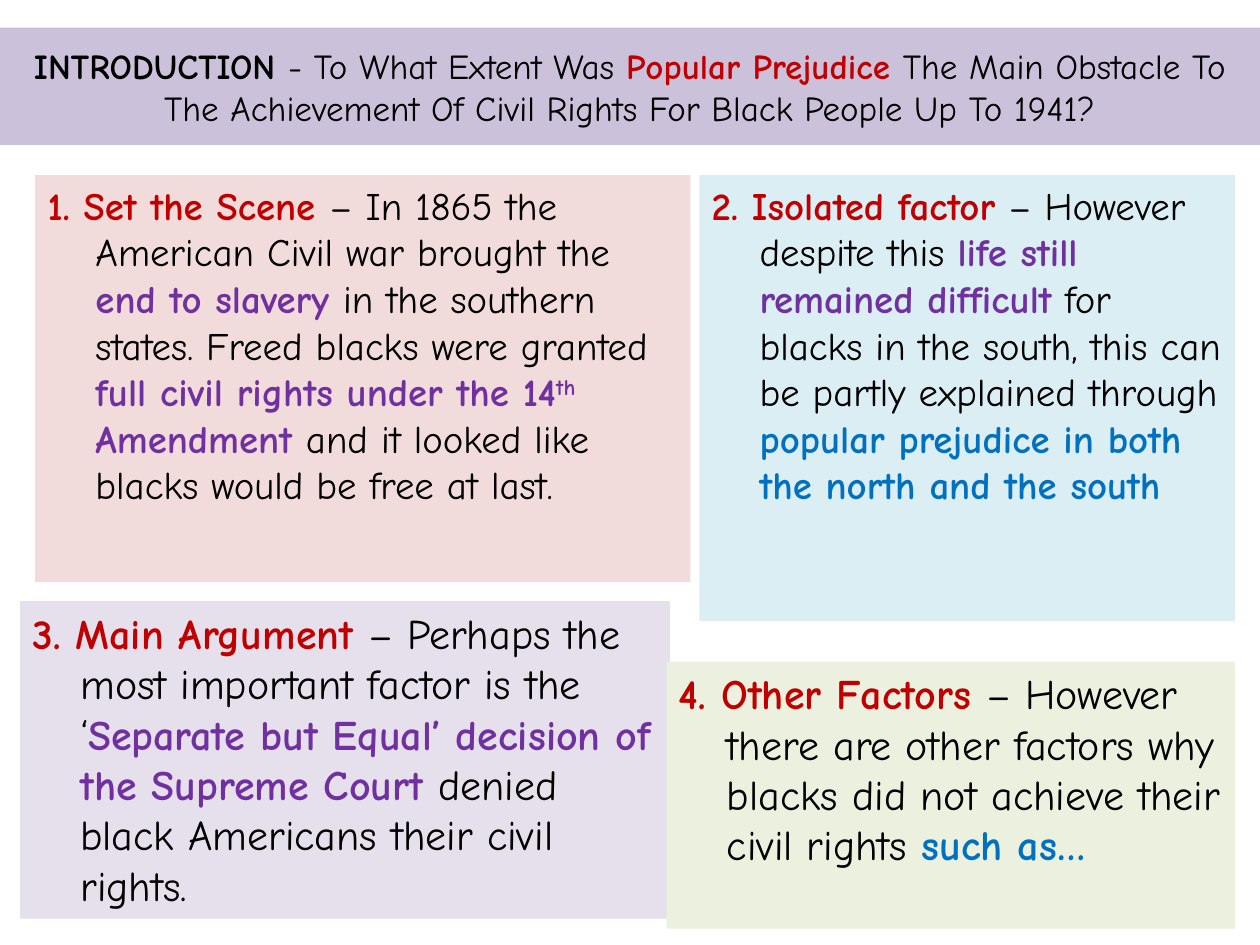
import pptx
import pptx.util
import pptx.dml.color
import pptx.enum.text
from dataclasses import dataclass

Inches = pptx.util.Inches
Align = pptx.enum.text.PP_ALIGN
Anchor = pptx.enum.text.MSO_ANCHOR


@dataclass(frozen=True)
class Theme:
    font: str = "Comic Neue"
    title_size: float = 20
    body_size: float = 22.2
    large_size: float = 24
    text: str = "000000"
    red: str = "C00000"
    purple: str = "7030A0"
    blue: str = "0070C0"
    banner: str = "CCC1DA"
    pink: str = "F2DCDB"
    aqua: str = "DBEEF4"
    lilac: str = "E6E0EC"
    green: str = "EBF1DE"


class Deck:
    def __init__(self, theme):
        self.theme = theme
        self.prs = pptx.Presentation()
        self.prs.slide_width = Inches(10)
        self.prs.slide_height = Inches(7.5)
        self.slide = self.prs.slides.add_slide(self.prs.slide_layouts[6])

    def panel(self, box, fill, size, runs):
        sp = self.slide.shapes.add_textbox(*map(Inches, box))
        sp.fill.solid()
        sp.fill.fore_color.rgb = pptx.dml.color.RGBColor.from_string(fill)
        tf = sp.text_frame
        tf.word_wrap = True
        p = tf.paragraphs[0]
        p.font.name = self.theme.font
        p.font.size = pptx.util.Pt(size)
        for text, color, bold, *superscript in runs:
            r = p.add_run()
            r.text = text
            r.font.bold = bold
            r.font.color.rgb = pptx.dml.color.RGBColor.from_string(color)
            if superscript:
                r._r.get_or_add_rPr().set("baseline", "30000")
        return tf

    def title(self, box, runs):
        tf = self.panel(box, self.theme.banner, self.theme.title_size, runs)
        tf.vertical_anchor = Anchor.MIDDLE
        tf.paragraphs[0].alignment = Align.CENTER

    def point(self, box, fill, size, runs):
        tf = self.panel(box, fill, size, runs)
        pPr = tf.paragraphs[0]._p.get_or_add_pPr()
        pPr.set("marL", str(Inches(0.38)))
        pPr.set("indent", str(-Inches(0.38)))


def main():
    t = Theme()
    deck = Deck(t)
    deck.title((0, 0.22, 10, 0.93), [
        ("INTRODUCTION ", t.text, True),
        ("- To What Extent Was ", t.text, False),
        ("Popular Prejudice ", t.red, True),
        ("The Main Obstacle To The Achievement Of Civil Rights "
         "For Black People Up To 1941?", t.text, False),
    ])
    deck.point((0.28, 1.39, 5.2, 3.23), t.pink, t.body_size, [
        ("1. Set the Scene ", t.red, True),
        ("– In 1865 the American Civil war brought the ", t.text, False),
        ("end to slavery ", t.purple, True),
        ("in the southern states. Freed blacks were granted ", t.text, False),
        ("full civil rights under the 14", t.purple, True),
        ("th", t.purple, True, True),
        (" Amendment ", t.purple, True),
        ("and it looked like blacks would be free at last.", t.text, False),
    ])
    deck.point((5.55, 1.39, 4.25, 3.54), t.aqua, t.body_size, [
        ("2. Isolated factor", t.red, True),
        (" – However despite this ", t.text, False),
        ("life still remained difficult", t.purple, True),
        (" for blacks in the south, this can be partly explained through ",
         t.text, False),
        ("popular prejudice in both the north and the south", t.blue, True),
    ])
    deck.point((0.16, 4.77, 5.16, 2.52), t.lilac, t.large_size, [
        ("3. Main Argument ", t.red, True),
        ("– Perhaps the most important factor is the ‘", t.text, False),
        ("Separate but Equal’ decision of the Supreme Court ", t.purple, True),
        ("denied black Americans their civil rights.", t.text, False),
    ])
    deck.point((5.29, 5.25, 4.51, 2.12), t.green, t.large_size, [
        ("4. Other Factors ", t.red, True),
        ("– However there are other factors why blacks did not achieve "
         "their civil rights ", t.text, False),
        ("such as…", t.blue, True),
    ])
    deck.prs.save("out.pptx")


if __name__ == "__main__":
    main()
